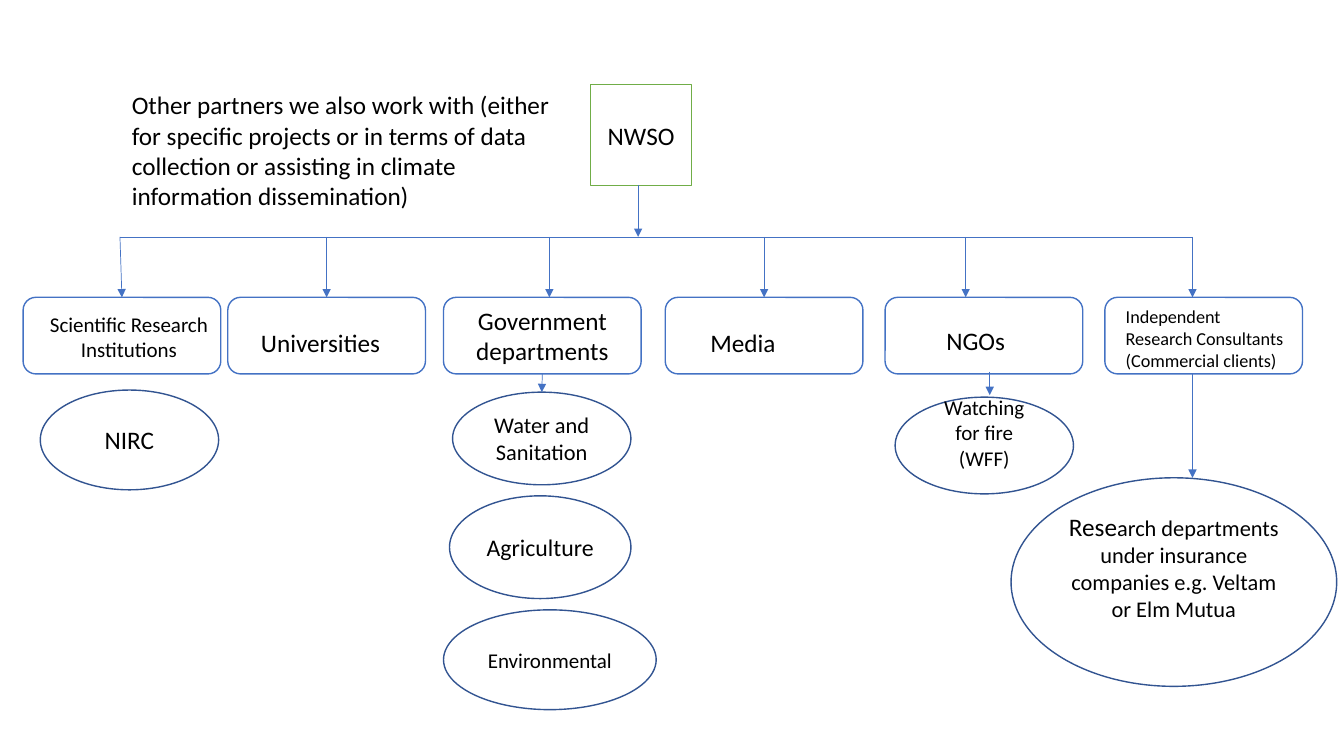
"""Build a one-slide chart of partner groups and the bodies under each."""
from pptx import Presentation
from pptx.dml.color import RGBColor
from pptx.enum.shapes import MSO_CONNECTOR, MSO_SHAPE
from pptx.enum.text import MSO_ANCHOR, MSO_AUTO_SIZE, PP_ALIGN
from pptx.oxml.ns import qn
from pptx.util import Pt
from lxml.etree import SubElement

HUES = {"ink": "000000", "white": "FFFFFF", "blue": "4472C4",
        "navy": "325491", "green": "70AD47"}
HUES = {name: RGBColor.from_string(code) for name, code in HUES.items()}

deck = Presentation()
deck.slide_width, deck.slide_height = Pt(960), Pt(540)
slide = deck.slides.add_slide(deck.slide_layouts[6])
shapes = slide.shapes


def write(shape, runs, align, form):
    """Fill a shape with one paragraph of (text, size) runs."""
    frame = shape.text_frame
    for key, value in form.items():
        setattr(frame, key, value)
    para = frame.paragraphs[0]
    para.alignment = align
    for text, size in runs:
        run = para.add_run()
        run.text = text
        look = {"name": "Calibri", "size": Pt(size)}
        for key, value in look.items():
            setattr(run.font, key, value)
        run.font.color.rgb = HUES["ink"]


def draw(kind, place, edge, runs=(), fill=True, foot=3.6):
    """Add an outlined shape with centred text."""
    shape = shapes.add_shape(kind, *map(Pt, place))
    shape.shadow.inherit = False
    if fill:
        shape.fill.solid()
        shape.fill.fore_color.rgb = HUES["white"]
    else:
        shape.fill.background()
    shape.line.color.rgb = HUES[edge]
    shape.line.width = Pt(1)
    form = {"word_wrap": True, "vertical_anchor": MSO_ANCHOR.MIDDLE,
            "margin_bottom": Pt(foot)}
    write(shape, runs, PP_ALIGN.CENTER, form)
    return shape


draw(MSO_SHAPE.RECTANGLE, (422, 60.5, 72, 72), "green", [("NWSO", 18)])

rail, top, wide, high = 169.2, 212.4, 141.2, 54.7
groups = [
    ("science", 16.5, []),
    ("study", 162.7, []),
    ("state", 316.8, [("Government departments", 18)]),
    ("media", 475.2, []),
    ("ngo", 632.2, []),
    ("client", 789.2, []),
]
boxes = {}
for name, left, runs in groups:
    boxes[name] = draw(MSO_SHAPE.ROUNDED_RECTANGLE, (left, top, wide, high),
                       "blue", runs, fill=False)

ovals = [
    ("council", (28.8, 278.6, 127.4, 71.3), [("NIRC", 18)], 3.6),
    ("nature", (316.8, 435.6, 151.9, 71.3), [("Environmental", 15)], 3.6),
    ("fire", (639.4, 283.7, 127.4, 69.1), [("Watching for fire (WFF)", 15)], 22),
    ("water", (323.3, 280.1, 127.4, 66.2), [("Water and Sanitation", 16)], 3.6),
    ("farm", (321.1, 354.2, 129.6, 73.4), [("Agriculture", 17)], 3.6),
    ("cover", (722.2, 341.3, 232.6, 149),
     [("Rese", 18), ("arch departments under insurance companies e.g. "
                     "Veltam or Elm Mutua", 16)], 25.6),
]
for name, place, runs, foot in ovals:
    boxes[name] = draw(MSO_SHAPE.OVAL, place, "navy", runs, foot=foot)

labels = [
    ((21.6, 218.9, 141.1, 61.9), "Scientific Research Institutions", 15,
     PP_ALIGN.CENTER, True),
    ((179.3, 230.4, 100.8, 28.8), "Universities", 18, PP_ALIGN.LEFT, False),
    ((797, 214.6, 128.2, 70.6),
     "Independent Research Consultants (Commercial clients)", 13,
     PP_ALIGN.LEFT, True),
    ((500.4, 230.4, 61.9, 28.8), "Media", 18, PP_ALIGN.LEFT, False),
    ((668.9, 229, 56.9, 28.8), "NGOs", 18, PP_ALIGN.LEFT, False),
    ((87.1, 60.5, 326.2, 94.3),
     "Other partners we also work with (either for specific projects or in "
     "terms of data collection or assisting in climate information "
     "dissemination)", 18, PP_ALIGN.LEFT, True),
]
for place, text, size, align, wrap in labels:
    label = shapes.add_textbox(*map(Pt, place))
    form = {"word_wrap": wrap, "auto_size": MSO_AUTO_SIZE.SHAPE_TO_FIT_TEXT}
    write(label, [(text, size)], align, form)

links = [
    ((455.8, 132.5, 455.8, rail), None, None, True),
    ((85.7, rail, 851.8, rail), None, None, False),
    ((851.8, top + high, 851.8, 341.3), None, None, True),
    ((387.4, top + high, 387, 280.1), "state", "water", True),
    ((707, 265.7, 707, 282.2), None, None, True),
    ((85.7, rail, 87.1, top), None, "science", True),
    ((233.3, rail, 233.3, top), None, "study", True),
    ((392.4, rail, 392.4, top), None, None, True),
    ((545.8, rail, 545.8, top), None, "media", True),
    ((689.8, rail, 689.8, top), None, None, True),
    ((851.8, rail, 851.8, top), None, None, True),
]
for ends, start, stop, arrow in links:
    link = shapes.add_connector(MSO_CONNECTOR.STRAIGHT, *map(Pt, ends))
    if start:
        link.begin_connect(boxes[start], 2)
    if stop:
        link.end_connect(boxes[stop], 0)
    link.line.color.rgb = HUES["blue"]
    link.line.width = Pt(0.5)
    if arrow:
        SubElement(link.line._get_or_add_ln(), qn("a:tailEnd"), type="triangle")
    SubElement(link._element.spPr, qn("a:effectLst"))

deck.save("out.pptx")
